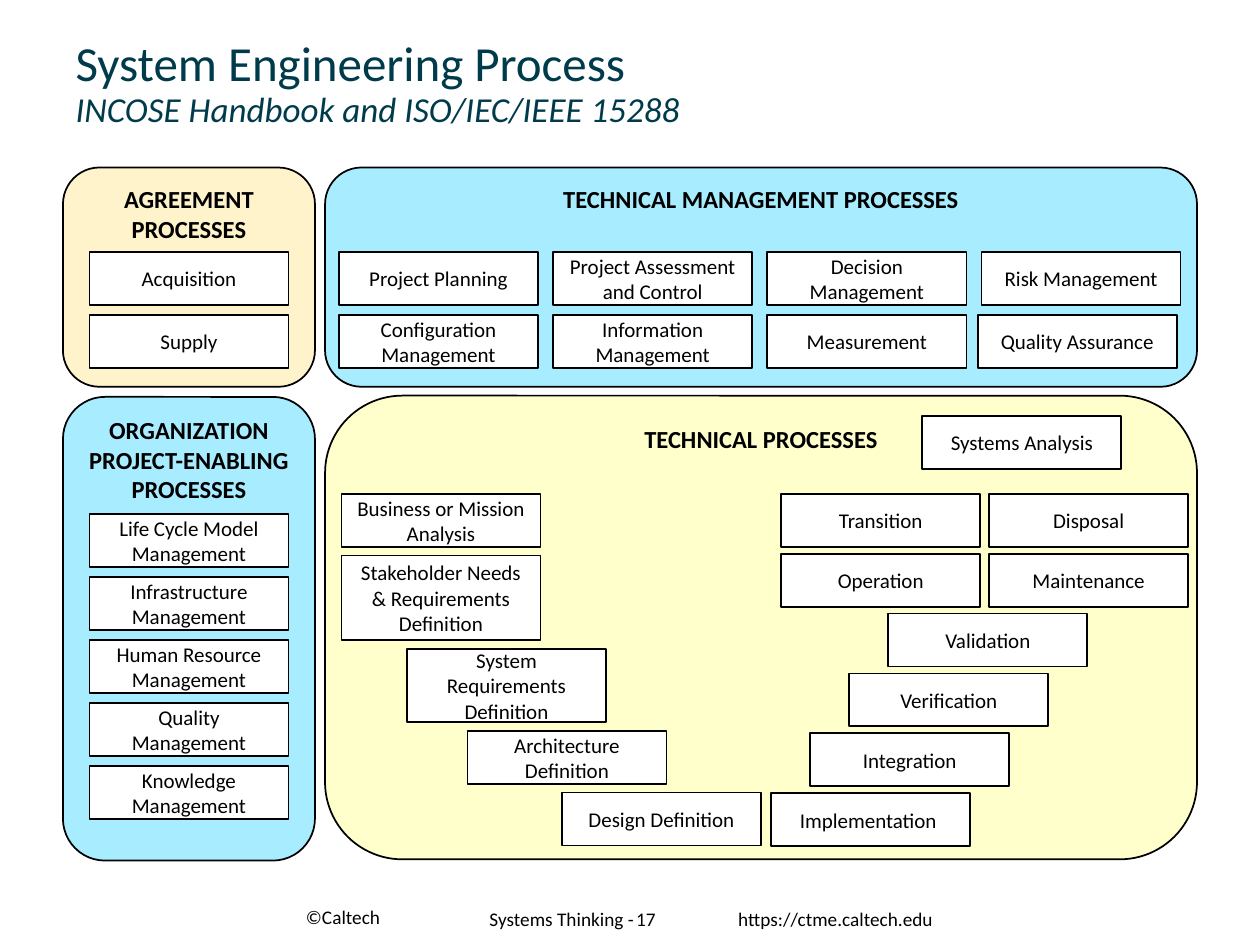
from pptx import Presentation
from pptx.dml.color import RGBColor
from pptx.enum.shapes import MSO_SHAPE as Shape
from pptx.enum.text import MSO_ANCHOR as Anchor, MSO_AUTO_SIZE as AutoSize, PP_ALIGN as Align
from pptx.util import Inches, Pt

FONT = "Calibri"
COLORS = {"ink": "000000", "title": "003B4C", "box": "FFFFFF",
          "cream": "FFF3CB", "sky": "A8ECFF", "lemon": "FFFFCC"}

# Content
TITLE = [("System Engineering Process", 28, False),
         ("INCOSE Handbook and ISO/IEC/IEEE 15288", 20, True)]
AGREEMENT = ["Acquisition", "Supply"]
ORGANIZATION = ["Life Cycle Model Management", "Infrastructure Management",
                "Human Resource Management", "Quality Management",
                "Knowledge Management"]
MANAGEMENT = [["Project Planning", "Project Assessment and Control",
               "Decision Management", "Risk Management"],
              ["Configuration Management", "Information Management",
               "Measurement", "Quality Assurance"]]
# Left arm of the V: name, left, top, height
DEFINITION = [("Business or Mission Analysis", 2.71, 3.92, 0.42),
              ("Stakeholder Needs & Requirements Definition", 2.71, 4.41, 0.67),
              ("System Requirements Definition", 3.23, 5.15, 0.58),
              ("Architecture Definition", 3.71, 5.8, 0.42),
              ("Design Definition", 4.46, 6.29, 0.42)]
# Right arm of the V, top to bottom
USE = [["Transition", "Disposal"], ["Operation", "Maintenance"]]
REALIZATION = ["Validation", "Verification", "Integration", "Implementation "]
FOOTERS = [("©Caltech", 2.33, 7.17, 1.17, 0.25, Align.LEFT, Anchor.BOTTOM),
           ("Systems Thinking -", 3.64, 7.17, 1.49, 0.25, Align.RIGHT, Anchor.MIDDLE),
           ("17", 4.95, 7.17, 0.67, 0.25, Align.LEFT, Anchor.MIDDLE),
           ("https://ctme.caltech.edu", 5.76, 7.15, 2.02, 0.29, Align.LEFT, Anchor.TOP)]

# Grid, in inches
BOX_WIDTH, BOX_HEIGHT = 1.58, 0.42
ROW_STEP = 0.5
SIDE_LEFT, SIDE_WIDTH = 0.5, 2
MAIN_LEFT, MAIN_WIDTH = 2.58, 6.92
SIDE_BOX_LEFT = SIDE_LEFT + (SIDE_WIDTH - BOX_WIDTH) / 2
PANEL_TOP, PANEL_HEIGHT = 1.33, 1.74
LOWER_HEIGHT = 3.68
FIRST_ROW = 2
MANAGEMENT_LEFT, MANAGEMENT_STEP = 2.69, 1.7
V_TOP, V_STEP, V_SLOPE = 3.92, 0.475, 0.31
USE_LEFT, USE_STEP = 6.2, 1.65
VALIDATION_LEFT = 7.05

presentation = Presentation()
presentation.slide_width, presentation.slide_height = Inches(10), Inches(7.5)
slide = presentation.slides.add_slide(presentation.slide_layouts[5])


def add_run(paragraph, text, size, color="ink", bold=False, italic=False):
    run = paragraph.add_run()
    run.text = text
    run.font.name, run.font.size = FONT, Pt(size)
    run.font.bold, run.font.italic = bold, italic
    run.font.color.rgb = RGBColor.from_string(COLORS[color])


def add_block(kind, fill, text, size, anchor, left, top, width, height, bold=False):
    shape = slide.shapes.add_shape(
        kind, Inches(left), Inches(top), Inches(width), Inches(height))
    shape.shadow.inherit = False
    shape.fill.solid()
    shape.fill.fore_color.rgb = RGBColor.from_string(COLORS[fill])
    shape.line.color.rgb = RGBColor.from_string(COLORS["ink"])
    shape.line.width = Pt(1)
    frame = shape.text_frame
    frame.word_wrap, frame.vertical_anchor = True, anchor
    paragraph = frame.paragraphs[0]
    paragraph.alignment = Align.CENTER
    add_run(paragraph, text, size, bold=bold)


def add_panel(text, fill, left, top, width, height):
    add_block(Shape.ROUNDED_RECTANGLE, fill, text, 14, Anchor.TOP,
              left, top, width, height, bold=True)


def add_box(text, left, top, height=BOX_HEIGHT):
    add_block(Shape.RECTANGLE, "box", text, 12, Anchor.MIDDLE,
              left, top, BOX_WIDTH, height)


# Title
title = slide.shapes.title
title.left, title.top, title.width, title.height = map(Inches, (0.5, 0.08, 9, 1))
title.text_frame.auto_size = AutoSize.NONE
title.text_frame.vertical_anchor = Anchor.BOTTOM
heading = title.text_frame.paragraphs[0]
heading.alignment, heading.line_spacing = Align.LEFT, 0.9
for index, (text, size, italic) in enumerate(TITLE):
    if index:
        heading.add_line_break()
    add_run(heading, text, size, "title", italic=italic)

# Agreement and organization columns
add_panel("AGREEMENT PROCESSES", "cream", SIDE_LEFT, PANEL_TOP, SIDE_WIDTH, PANEL_HEIGHT)
add_panel("ORGANIZATION PROJECT-ENABLING PROCESSES", "sky",
          SIDE_LEFT, 3.15, SIDE_WIDTH, LOWER_HEIGHT)
for names, first_top in ((AGREEMENT, FIRST_ROW), (ORGANIZATION, 4.08)):
    for row, name in enumerate(names):
        add_box(name, SIDE_BOX_LEFT, first_top + row * ROW_STEP)

# Technical management grid
add_panel("TECHNICAL MANAGEMENT PROCESSES", "sky",
          MAIN_LEFT, PANEL_TOP, MAIN_WIDTH, PANEL_HEIGHT)
for row, names in enumerate(MANAGEMENT):
    for column, name in enumerate(names):
        nudge = -0.03 if name == "Quality Assurance" else 0
        add_box(name, MANAGEMENT_LEFT + column * MANAGEMENT_STEP + nudge,
                FIRST_ROW + row * ROW_STEP)

# Technical processes in a V
add_panel("TECHNICAL PROCESSES", "lemon", MAIN_LEFT, 3.14, MAIN_WIDTH, LOWER_HEIGHT)
add_box("Systems Analysis", 7.32, 3.3)
for name, left, top, height in DEFINITION:
    add_box(name, left, top, height)
for row, names in enumerate(USE):
    for column, name in enumerate(names):
        add_box(name, USE_LEFT + column * USE_STEP, V_TOP + row * V_STEP)
for step, name in enumerate(REALIZATION):
    add_box(name, VALIDATION_LEFT - step * V_SLOPE, V_TOP + (len(USE) + step) * V_STEP)

# Footer
for text, left, top, width, height, alignment, anchor in FOOTERS:
    frame = slide.shapes.add_textbox(
        Inches(left), Inches(top), Inches(width), Inches(height)).text_frame
    frame.word_wrap, frame.vertical_anchor = True, anchor
    frame.paragraphs[0].alignment = alignment
    add_run(frame.paragraphs[0], text, 11)

presentation.save("out.pptx")
